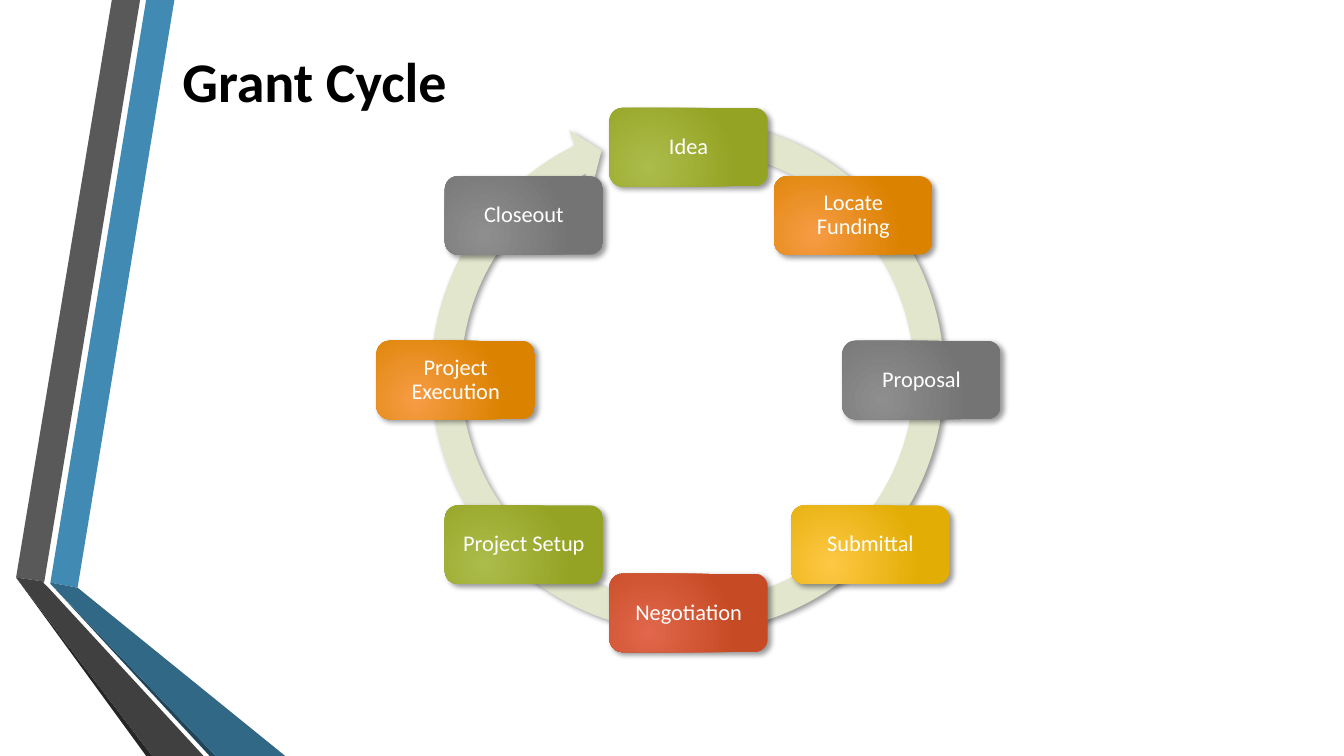
"""Build the Grant Cycle slide: eight steps on a ring, beside a folded ribbon."""
import math

from pptx import Presentation
from pptx import util as u
from pptx.dml.color import RGBColor
from pptx.enum import shapes, text
from pptx.oxml import parse_xml
from pptx.oxml.ns import nsdecls

WIDE, HIGH = 13.33, 7.5
FONT = "Calibri"
TITLE = "Grant Cycle"
HEX = {
    "blue": "418AB3", "gray": "595959", "black": "262626", "navy": "20455A",
    "teal": "316886", "coal": "404040", "ring": "E1E6CD",
    "ink": "000000", "white": "FFFFFF",
}
GRADS = {
    "green": ("ACBC4B", "94A323"),
    "orange": ("F79C45", "DB8200"),
    "silver": ("8E8E8E", "747474"),
    "gold": ("FEC845", "E2AD05"),
    "red": ("E1674C", "C64A23"),
}
# fmt: off
STEPS = [
    ("Idea", "green", 0), ("Locate Funding", "orange", 0),
    ("Proposal", "silver", 0), ("Submittal", "gold", 0.17),
    ("Negotiation", "red", 0), ("Project Setup", "green", 0),
    ("Project Execution", "orange", 0), ("Closeout", "silver", 0),
]
BANDS = [
    ("blue", [(50, 578), (77, 583), (173, 0), (145, 0)]),
    ("gray", [(139, 0), (111, 0), (16, 573), (44, 577)]),
    ("black", [(16, 573), (145, 750), (151, 750)]),
    ("navy", [(50, 579), (208, 750), (214, 750)]),
    ("teal", [(50, 579), (214, 750), (283, 750), (77, 583), (50, 578)]),
    ("coal", [(202, 750), (48, 583), (43, 578), (44, 577), (16, 573), (151, 750)]),
]
# fmt: on
MID_X, MID_Y, RADIUS = 6.83, 3.77, 2.31
BOX_W, BOX_H, PAD = 1.57, 0.78, 0.07
RING = (4.11, 1.02, 5.42, 5.42)
BEND = (0.055, 3.307, 146.175, 168.922, 0.058)


def inches(*sizes):
    return [u.Inches(size) for size in sizes]


def color(name):
    return RGBColor.from_string(HEX[name])


def paint(shape, name):
    shape.fill.solid()
    shape.fill.fore_color.rgb = color(name)
    shape.line.fill.background()
    shape.shadow.inherit = False


def blend(shape, name):
    stops = "".join(
        f'<a:gs pos="{pos}"><a:srgbClr val="{tone}"/></a:gs>'
        for pos, tone in zip((0, 100000), GRADS[name])
    )
    grad = parse_xml(
        f'<a:gradFill {nsdecls("a")} rotWithShape="1"><a:gsLst>{stops}</a:gsLst>'
        '<a:path path="circle"><a:fillToRect l="50000" t="100000" '
        'r="100000" b="50000"/></a:path></a:gradFill>'
    )
    shape.line.fill.background()
    shape.shadow.inherit = False
    shape.element.spPr.insert(2, grad)


def shade(shape):
    drop = parse_xml(
        f'<a:outerShdw {nsdecls("a")} blurRad="{u.Pt(4)}" dist="{u.Pt(3)}" '
        'dir="2700000" algn="ctr" rotWithShape="0"><a:srgbClr val="000000">'
        '<a:alpha val="40000"/></a:srgbClr></a:outerShdw>'
    )
    shape.element.spPr[-1].append(drop)


def write(shape, words, size, tone, align, bold=False):
    frame = shape.text_frame
    frame.word_wrap = True
    frame.vertical_anchor = text.MSO_ANCHOR.MIDDLE
    line = frame.paragraphs[0]
    line.text = words
    line.alignment = align
    line.font.name = FONT
    line.font.size = u.Pt(size)
    line.font.bold = bold
    line.font.color.rgb = color(tone)
    return frame


def add_bands(slide):
    for name, points in BANDS:
        pen = slide.shapes.build_freeform(*points[0], scale=u.Inches(0.01))
        pen.add_line_segments(points[1:], close=True)
        paint(pen.convert_to_shape(), name)


def add_title(slide):
    title = slide.shapes.title
    title.left, title.top, title.width, title.height = inches(1.71, -0.17, 10.96, 1.92)
    write(title, TITLE, 40, "ink", text.PP_ALIGN.LEFT, True)


def add_cycle(slide):
    kinds = shapes.MSO_SHAPE
    ring = slide.shapes.add_shape(kinds.CIRCULAR_ARROW, *inches(*RING))
    for index, value in enumerate(BEND):
        ring.adjustments[index] = value
    paint(ring, "ring")
    shade(ring)
    for index, (words, name, shift) in enumerate(STEPS):
        turn = math.tau * index / len(STEPS)
        left = MID_X + RADIUS * math.sin(turn) - BOX_W / 2 + shift
        top = MID_Y - RADIUS * math.cos(turn) - BOX_H / 2
        box = slide.shapes.add_shape(
            kinds.ROUNDED_RECTANGLE, *inches(left, top, BOX_W, BOX_H)
        )
        blend(box, name)
        shade(box)
        frame = write(box, words, 16, "white", text.PP_ALIGN.CENTER)
        frame.paragraphs[0].line_spacing = 0.9
        frame.margin_left = frame.margin_right = u.Inches(PAD)
        frame.margin_top = frame.margin_bottom = u.Inches(PAD)


def main():
    deck = Presentation()
    deck.slide_width, deck.slide_height = inches(WIDE, HIGH)
    slide = deck.slides.add_slide(deck.slide_layouts[5])
    add_bands(slide)
    add_title(slide)
    add_cycle(slide)
    deck.save("out.pptx")


if __name__ == "__main__":
    main()
